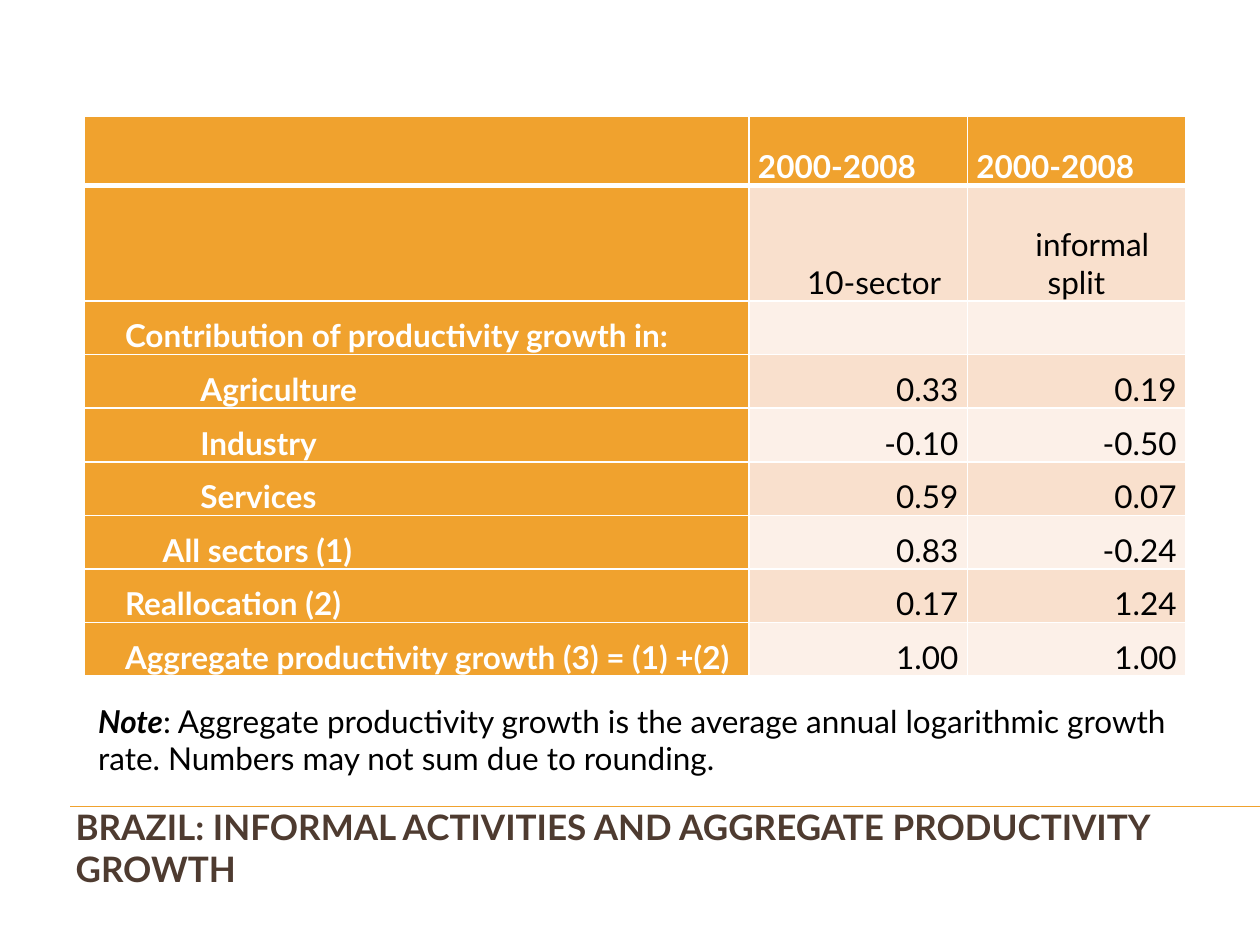
import dataclasses
import typing

import lxml.etree
import pptx
import pptx.dml.color
import pptx.enum.shapes
import pptx.enum.text
import pptx.oxml
import pptx.oxml.ns
import pptx.util

Cm = pptx.util.Cm
Pt = pptx.util.Pt
Align = pptx.enum.text.PP_ALIGN
Anchor = pptx.enum.text.MSO_ANCHOR


@dataclasses.dataclass(frozen=True)
class Theme:
    font: str = "Lato"
    accent: str = "F0A22E"
    dark_band: str = "F9E0CD"
    light_band: str = "FCF0E8"
    white: str = "FFFFFF"
    black: str = "000000"
    heading: str = "4E3B30"
    title_size: int = 20
    text_size: int = 18
    thin_border: int = 1
    thick_border: int = 3


@dataclasses.dataclass(frozen=True)
class TableRow:
    label: str
    values: tuple[str, str]
    height: float = 1.08
    label_indent: float = 0.64
    value_indent: float = 0.64
    value_align: typing.Any = Align.RIGHT


THEME = Theme()
COLUMN_WIDTHS = (13.4, 4.4, 4.4)
ROWS = (
    TableRow("", ("2000-2008", "2000-2008"), height=1.4, value_indent=0, value_align=Align.LEFT),
    TableRow("", ("10-sector", "informal split"), height=2.33, value_align=Align.CENTER),
    TableRow("Contribution of productivity growth in:", ("", "")),
    TableRow("Agriculture", ("0.33", "0.19"), label_indent=2.16),
    TableRow("Industry", ("-0.10", "-0.50"), label_indent=2.16),
    TableRow("Services", ("0.59", "0.07"), label_indent=2.16),
    TableRow("All sectors (1)", ("0.83", "-0.24"), label_indent=1.4),
    TableRow("Reallocation (2)", ("0.17", "1.24")),
    TableRow("Aggregate productivity growth (3) = (1) +(2)", ("1.00", "1.00")),
)


def rgb(value: str) -> pptx.dml.color.RGBColor:
    return pptx.dml.color.RGBColor.from_string(value)


def add_span(para, text: str, *, size: int = THEME.text_size, color: str = THEME.black,
             bold: bool = False, italic: bool = False) -> None:
    span = para.add_run()
    span.text = text
    span.font.name = THEME.font
    span.font.size = Pt(size)
    span.font.color.rgb = rgb(color)
    span.font.bold = bold
    span.font.italic = italic


def set_borders(cell, row_index: int) -> None:
    top = THEME.thick_border if row_index == 1 else THEME.thin_border
    bottom = THEME.thick_border if row_index == 0 else THEME.thin_border
    widths = {"lnL": THEME.thin_border, "lnR": THEME.thin_border, "lnT": top, "lnB": bottom}
    properties = cell._tc.get_or_add_tcPr()
    for position, (side, width) in enumerate(widths.items()):
        border = pptx.oxml.parse_xml(
            f'<a:{side} {pptx.oxml.ns.nsdecls("a")} w="{Pt(width)}"><a:solidFill>'
            f'<a:srgbClr val="{THEME.white}"/></a:solidFill></a:{side}>'
        )
        properties.insert(position, border)


def fill_cell(cell, text: str, *, fill: str, color: str, bold: bool,
              align: typing.Any, indent: float) -> None:
    cell.fill.solid()
    cell.fill.fore_color.rgb = rgb(fill)
    cell.vertical_anchor = Anchor.BOTTOM
    cell.margin_left = cell.margin_right = Cm(0.18)
    cell.margin_top = cell.margin_bottom = 0
    para = cell.text_frame.paragraphs[0]
    para.alignment = align
    if text:
        para_properties = para._p.get_or_add_pPr()
        para_properties.set("marL", "0")
        para_properties.set("indent", str(Cm(indent)))
        add_span(para, text, color=color, bold=bold)


def add_growth_table(page) -> None:
    frame = page.shapes.add_table(
        len(ROWS), len(COLUMN_WIDTHS), Cm(1.7), Cm(2.34),
        Cm(sum(COLUMN_WIDTHS)), Cm(sum(row.height for row in ROWS)),
    )
    table = frame.table
    for column, width in zip(table.columns, COLUMN_WIDTHS):
        column.width = Cm(width)
    for row_index, row in enumerate(ROWS):
        table.rows[row_index].height = Cm(row.height)
        band = THEME.dark_band if row_index % 2 else THEME.light_band
        for column_index, text in enumerate((row.label, *row.values)):
            is_label = column_index == 0
            is_header = is_label or row_index == 0
            cell = table.cell(row_index, column_index)
            fill_cell(
                cell, text,
                fill=THEME.accent if is_header else band,
                color=THEME.white if is_header else THEME.black,
                bold=is_header,
                align=Align.LEFT if is_label else row.value_align,
                indent=row.label_indent if is_label else row.value_indent,
            )
            set_borders(cell, row_index)


def add_rule(page) -> None:
    rule = page.shapes.add_connector(
        pptx.enum.shapes.MSO_CONNECTOR.STRAIGHT, Cm(1.42), Cm(16.26), Cm(25.4), Cm(16.26)
    )
    rule.line.color.rgb = rgb(THEME.accent)
    rule.line.width = Pt(0.75)
    lxml.etree.SubElement(rule._element.spPr, pptx.oxml.ns.qn("a:effectLst"))


def add_title(page) -> None:
    title = page.shapes.title
    title.left, title.top, title.width, title.height = Cm(1.27), Cm(16.36), Cm(23.5), Cm(1.45)
    title.text_frame.word_wrap = True
    title.text_frame.auto_size = pptx.enum.text.MSO_AUTO_SIZE.NONE
    title.text_frame.vertical_anchor = Anchor.MIDDLE
    para = title.text_frame.paragraphs[0]
    para.alignment = Align.LEFT
    add_span(para, "BRAZIL: INFORMAL ACTIVITIES AND AGGREGATE PRODUCTIVITY GROWTH",
             size=THEME.title_size, color=THEME.heading, bold=True)


def add_note(page) -> None:
    box = page.shapes.add_textbox(Cm(1.73), Cm(14.02), Cm(22.2), Cm(1.8))
    box.text_frame.word_wrap = True
    box.text_frame.auto_size = pptx.enum.text.MSO_AUTO_SIZE.SHAPE_TO_FIT_TEXT
    para = box.text_frame.paragraphs[0]
    add_span(para, "Note", bold=True, italic=True)
    add_span(para, ": Aggregate productivity growth is the average annual logarithmic growth rate. "
                   "Numbers may not sum due to rounding.")


def main() -> None:
    deck = pptx.Presentation()
    deck.slide_width, deck.slide_height = Cm(25.4), Cm(19.05)
    page = deck.slides.add_slide(deck.slide_layouts.get_by_name("Title Only"))
    add_rule(page)
    add_title(page)
    add_growth_table(page)
    add_note(page)
    deck.save("out.pptx")


if __name__ == "__main__":
    main()
